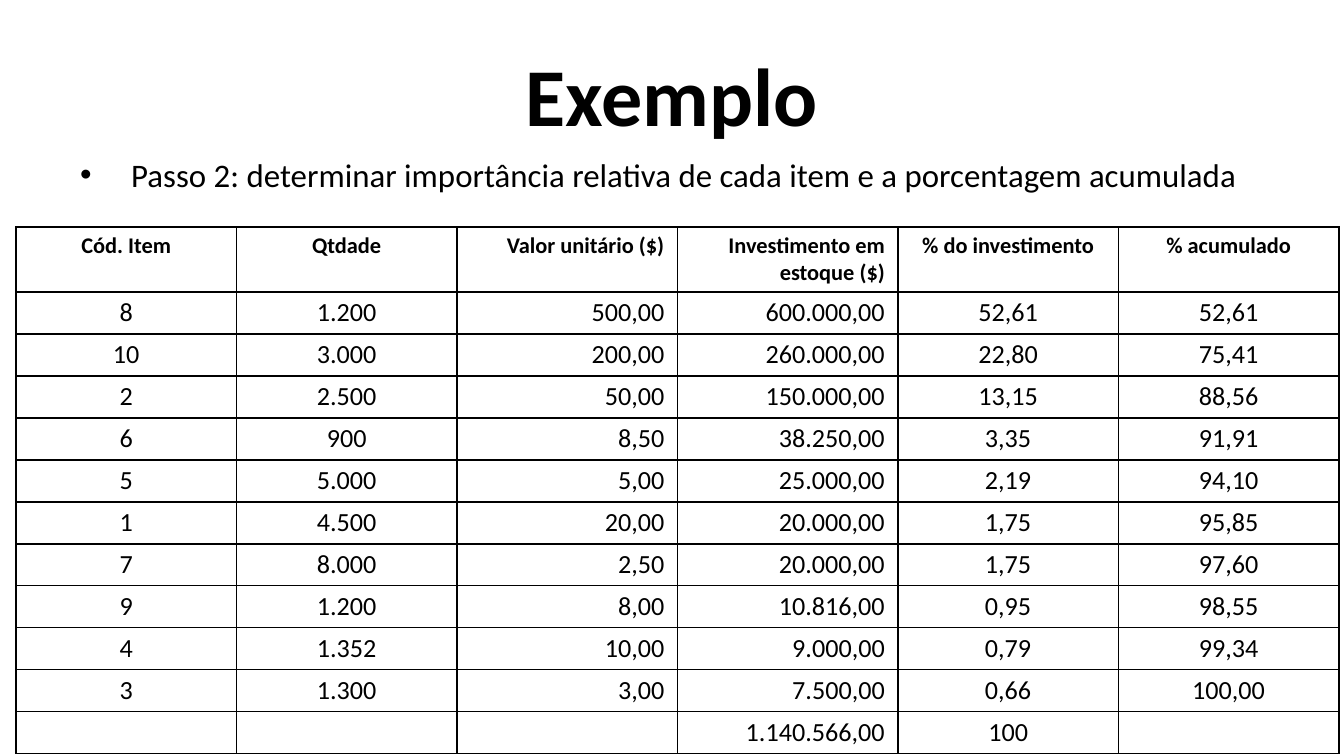
from dataclasses import dataclass

from lxml.etree import SubElement
from pptx import Presentation
from pptx.dml.color import RGBColor
from pptx.enum.text import MSO_ANCHOR, PP_ALIGN
from pptx.oxml.ns import qn
from pptx.util import Emu, Pt

SLIDE_WIDTH, SLIDE_HEIGHT = 1344, 756
EMU_PER_PX = 9144000 / SLIDE_WIDTH
FONT = "Calibri"
COLORS = {"ink": "000000", "paper": "FFFFFF"}


@dataclass(frozen=True)
class Box:
    left: int
    top: int
    width: int
    height: int


@dataclass(frozen=True)
class Column:
    heading: str
    align: PP_ALIGN


TITLE_BOX = Box(67, 31, 1210, 126)
STEP_BOX = Box(67, 148, 1210, 71)
TABLE_BOX = Box(16, 227, 1323, 527)
HEADER_HEIGHT, ROW_HEIGHT = 65, 42
BULLET_INDENT = 51
CELL_MARGIN_X, CELL_MARGIN_Y = 13, 5

COLUMNS = [
    Column("Cód. Item", PP_ALIGN.CENTER),
    Column("Qtdade", PP_ALIGN.CENTER),
    Column("Valor unitário ($)", PP_ALIGN.RIGHT),
    Column("Investimento em estoque ($)", PP_ALIGN.RIGHT),
    Column("% do investimento", PP_ALIGN.CENTER),
    Column("% acumulado", PP_ALIGN.CENTER),
]
ITEMS = [
    ("8", "1.200", "500,00", "600.000,00", "52,61", "52,61"),
    ("10", "3.000", "200,00", "260.000,00", "22,80", "75,41"),
    ("2", "2.500", "50,00", "150.000,00", "13,15", "88,56"),
    ("6", "900", "8,50", "38.250,00", "3,35", "91,91"),
    ("5", "5.000", "5,00", "25.000,00", "2,19", "94,10"),
    ("1", "4.500", "20,00", "20.000,00", "1,75", "95,85"),
    ("7", "8.000", "2,50", "20.000,00", "1,75", "97,60"),
    ("9", "1.200", "8,00", "10.816,00", "0,95", "98,55"),
    ("4", "1.352", "10,00", "9.000,00", "0,79", "99,34"),
    ("3", "1.300", "3,00", "7.500,00", "0,66", "100,00"),
]
TOTALS = ("", "", "", "1.140.566,00", "100", "")


def px(length: float) -> Emu:
    return Emu(round(length * EMU_PER_PX))


def place(box: Box) -> tuple[Emu, ...]:
    return px(box.left), px(box.top), px(box.width), px(box.height)


def write(frame, text: str, size: float, align: PP_ALIGN, bold: bool = False):
    """Fill a text frame with one formatted paragraph and return it."""
    frame.text = text
    frame.word_wrap = True
    paragraph = frame.paragraphs[0]
    paragraph.alignment = align
    for run in paragraph.runs:
        run.font.name = FONT
        run.font.size = Pt(size)
        run.font.bold = bold
        run.font.color.rgb = RGBColor.from_string(COLORS["ink"])
    if not text:
        # An empty cell needs its own text size, or its row grows.
        SubElement(paragraph._p, qn("a:endParaRPr"), sz=str(int(size * 100)))
    return paragraph


def add_bullet(paragraph) -> None:
    properties = paragraph._p.get_or_add_pPr()
    properties.set("marL", str(px(BULLET_INDENT)))
    properties.set("indent", str(-px(BULLET_INDENT)))
    SubElement(properties, qn("a:buFont"), typeface="Arial")
    SubElement(properties, qn("a:buChar"), char="•")


def add_borders(cell) -> None:
    properties = cell._tc.get_or_add_tcPr()
    for side in ("lnL", "lnR", "lnT", "lnB"):
        line = SubElement(properties, qn(f"a:{side}"), w=str(Pt(1)))
        fill = SubElement(line, qn("a:solidFill"))
        SubElement(fill, qn("a:srgbClr"), val=COLORS["ink"])


def fill_cell(cell, text: str, align: PP_ALIGN, is_header: bool) -> None:
    cell.margin_left = cell.margin_right = px(CELL_MARGIN_X)
    cell.margin_top = cell.margin_bottom = px(CELL_MARGIN_Y)
    add_borders(cell)
    cell.fill.background()
    write(cell.text_frame, text, 12 if is_header else 14, align, is_header)


def add_investment_table(slide) -> None:
    rows = [tuple(column.heading for column in COLUMNS), *ITEMS, TOTALS]
    table = slide.shapes.add_table(len(rows), len(COLUMNS), *place(TABLE_BOX)).table
    table.first_row = table.horz_banding = False
    for table_column in table.columns:
        table_column.width = px(TABLE_BOX.width / len(COLUMNS))
    for r, values in enumerate(rows):
        table.rows[r].height = px(ROW_HEIGHT if r else HEADER_HEIGHT)
        for c, (column, value) in enumerate(zip(COLUMNS, values)):
            fill_cell(table.cell(r, c), value, column.align, r == 0)


def main() -> None:
    presentation = Presentation()
    presentation.slide_width = px(SLIDE_WIDTH)
    presentation.slide_height = px(SLIDE_HEIGHT)
    slide = presentation.slides.add_slide(presentation.slide_layouts[6])
    slide.background.fill.solid()
    slide.background.fill.fore_color.rgb = RGBColor.from_string(COLORS["paper"])

    title = slide.shapes.add_textbox(*place(TITLE_BOX)).text_frame
    title.vertical_anchor = MSO_ANCHOR.MIDDLE
    write(title, "Exemplo", 44, PP_ALIGN.CENTER, bold=True)

    step = write(
        slide.shapes.add_textbox(*place(STEP_BOX)).text_frame,
        "Passo 2: determinar importância relativa de cada item e a porcentagem acumulada",
        17.6,
        PP_ALIGN.LEFT,
    )
    step.space_before = Pt(3.5)
    add_bullet(step)

    add_investment_table(slide)
    presentation.save("out.pptx")


if __name__ == "__main__":
    main()
